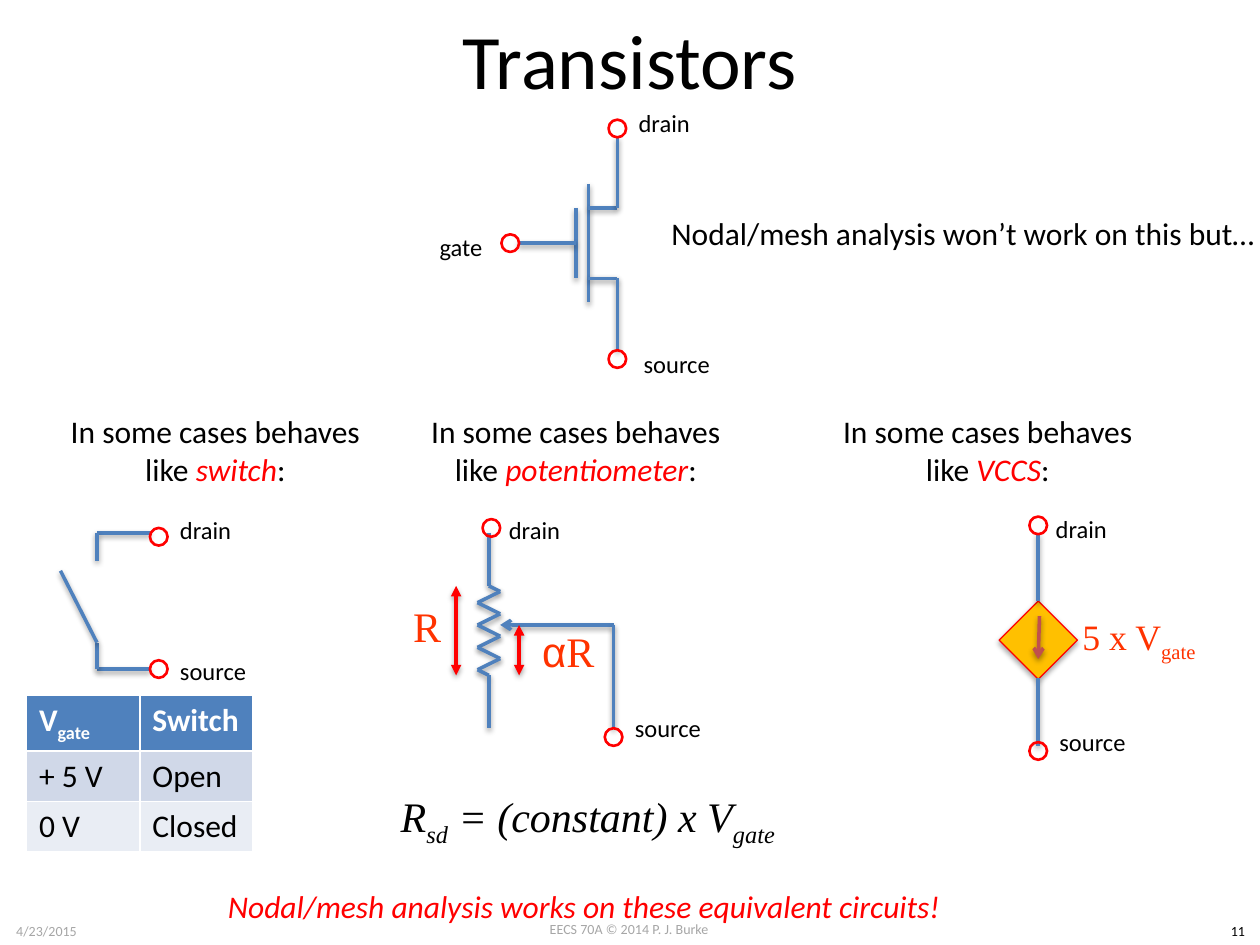
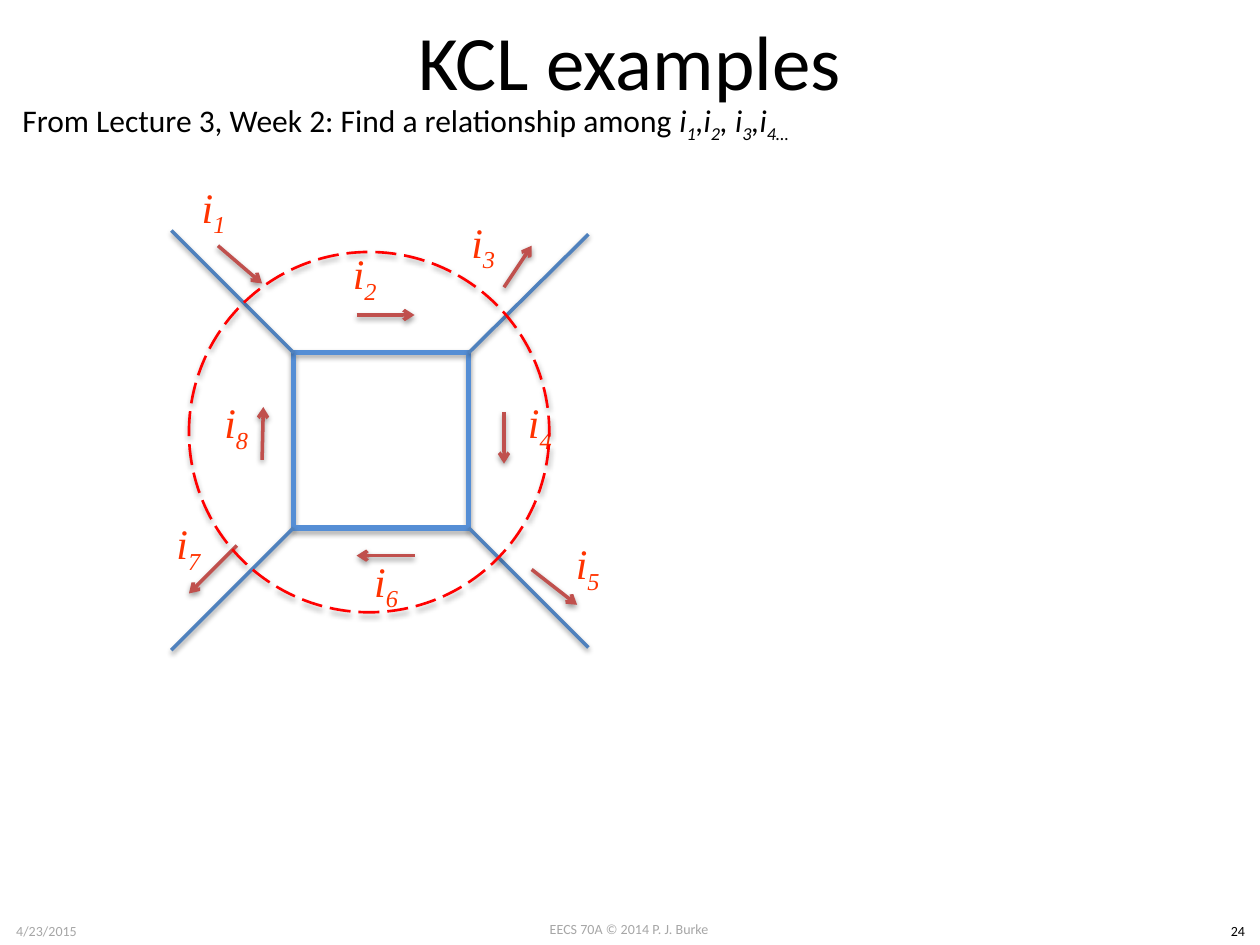
from dataclasses import dataclass
from itertools import pairwise

from lxml import etree
from pptx import Presentation
from pptx.dml.color import RGBColor
from pptx.enum import dml, shapes, text
from pptx.oxml.ns import qn
from pptx.util import Inches, Pt


@dataclass(frozen=True)
class Theme:
    body: str = "Calibri"
    math: str = "Times New Roman"
    greek: str = "Arial"
    black: str = "000000"
    white: str = "FFFFFF"
    gray: str = "A6A6A6"
    red: str = "FF0000"
    orange: str = "FF3300"
    wire: str = "4F81BD"
    current: str = "C0504D"
    loop: str = "558ED5"
    amber: str = "FFC000"
    bands: tuple = ("4F81BD", "D0D8E8", "E9EDF4")
    title_size: float = 44
    math_size: float = 24
    vccs_size: float = 20.4
    body_size: float = 18
    label_size: float = 14
    footer_size: float = 8


T = Theme()
ALIGN, ANCHOR = text.PP_ALIGN, text.MSO_ANCHOR

# Content shared by both slides; a run is (words, style)
DATE, CREDIT = "4/23/2015", "EECS 70A © 2014 P. J. Burke"

# Transistor slide
# Equivalent circuits: name, left edge of its heading
EQUIVALENTS = [("switch", 0.28), ("potentiometer", 3.14), ("VCCS", 6.41)]
HEADING_TOP, HEADING_SIZE = 3.22, (2.86, 0.71)

# Terminals: centre, label, label's left and top
TERMINALS = [
    ((4.9, 1.02), "drain", (4.97, 0.81)),
    ((4.9, 2.85), "source", (5.01, 2.72)),
    ((4.05, 1.93), "gate", (3.39, 1.79)),
    ((1.26, 4.26), "drain", (1.33, 4.04)),
    ((1.26, 5.31), "source", (1.33, 5.16)),
    ((3.9, 4.19), "drain", (3.94, 4.04)),
    ((4.87, 5.85), "source", (4.94, 5.61)),
    ((8.24, 4.17), "drain", (8.28, 4.03)),
    ((8.24, 5.96), "source", (8.31, 5.72)),
]
LABEL_WIDTH = {"drain": 0.61, "source": 0.73, "gate": 0.55}
TERMINAL_SIZE = 0.14

# Wires as chains of points
TRANSISTOR_WIRES = [
    [(4.57, 1.65), (4.57, 2.21)],
    [(4.67, 1.46), (4.67, 2.4)],
    [(4.57, 1.93), (4.11, 1.93)],
    [(4.67, 1.65), (4.9, 1.65), (4.9, 1.09)],
    [(4.67, 2.21), (4.9, 2.21), (4.9, 2.78)],
]
SWITCH_WIRES = [
    [(1.19, 4.23), (0.77, 4.23), (0.77, 4.45)],
    [(1.19, 5.31), (0.77, 5.31), (0.77, 5.1), (0.48, 4.53)],
]
RESISTOR_X, ZIGZAG_HALF, ZIGZAG_PEAKS = 3.88, 0.09, 8
ZIGZAG_TOP, ZIGZAG_BOTTOM = 4.65, 5.36
VCCS_WIRES = [[(8.24, 4.23), (8.24, 4.77)], [(8.24, 5.38), (8.24, 5.92)]]

SWITCH_STATES = [
    ([("V", ""), ("gate", "sub")], [("Switch", "")]),
    ([("+ 5 V", "")], [("Open", "")]),
    ([("0 V", "")], [("Closed", "")]),
]

# Formulas: box, runs, format
FORMULAS = [
    ((2.67, 4.6, 1.44, 0.73), [("R", "")], {}),
    ((3.79, 4.8, 1.44, 0.73), [("α", "greek"), ("R", "")], {}),
    ((8.47, 4.78, 1.14, 0.58), [("5 x V", ""), ("gate", "sub")],
     {"size": T.vccs_size}),
    ((2.92, 6.14, 3.49, 0.73),
     [("R", ""), ("sd", "sub"), (" = (constant) x V", ""), ("gate", "sub")],
     {"color": T.black, "italic": True}),
]

# KCL slide
KCL_QUESTION = [
    ("From Lecture 3, Week 2: Find a relationship among ", ""),
    ("i", "em"), ("1", "em sub"), (",i", "em"), ("2", "em sub"),
    (", i", "em"), ("3", "em sub"), (",i", "em"), ("4…", "em sub"),
]
# Currents 1 to 8: label's left and top, arrow start, arrow end
CURRENTS = [
    ((1.31, 1.36), (1.73, 1.95), (2.08, 2.25)),
    ((2.51, 1.89), (2.83, 2.5), (3.29, 2.5)),
    ((3.45, 1.64), (4, 2.28), (4.22, 1.95)),
    ((3.9, 3.07), (4, 3.27), (4, 3.68)),
    ((4.28, 4.19), (4.22, 4.52), (4.58, 4.8)),
    ((2.68, 4.33), (3.29, 4.41), (2.83, 4.41)),
    ((1.11, 4.03), (1.88, 4.33), (1.5, 4.71)),
    ((1.49, 3.07), (2.08, 3.65), (2.09, 3.23)),
]
LOOP_BOX = (2.33, 2.8, 1.39, 1.39)
SUPERNODE_BOX = (1.5, 2, 2.86, 2.86)
BRANCHES = [
    [(2.33, 2.8), (1.36, 1.83)], [(3.72, 2.8), (4.67, 1.86)],
    [(2.33, 4.19), (1.36, 5.16)], [(3.72, 4.19), (4.67, 5.14)],
]


# Drawing helpers
def inches(values):
    return [Inches(value) for value in values]


def rgb(color):
    return RGBColor.from_string(color)


def write(frame, runs, *, size=T.body_size, color=T.black, font=T.body,
          italic=False, bold=False, align=ALIGN.LEFT, anchor=ANCHOR.TOP,
          wrap=True):
    """Fill a text frame; run styles are em, accent, sub and greek."""
    if isinstance(runs, str):
        runs = [(runs, "")]
    frame.word_wrap = wrap
    frame.vertical_anchor = anchor
    paragraph = frame.paragraphs[0]
    paragraph.alignment = align
    for words, style in runs:
        run = paragraph.add_run()
        run.text = words
        run.font.size = Pt(size)
        run.font.name = T.greek if "greek" in style else font
        run.font.bold = bold
        run.font.italic = italic or "em" in style or "accent" in style
        run.font.color.rgb = rgb(T.red if "accent" in style else color)
        if "sub" in style:
            run.font._element.set("baseline", "-25000")


def add_text(slide, box, runs, **fmt):
    write(slide.shapes.add_textbox(*inches(box)).text_frame, runs, **fmt)


def add_formula(slide, box, runs, **fmt):
    base = dict(size=T.math_size, color=T.orange, font=T.math,
                align=ALIGN.CENTER, anchor=ANCHOR.MIDDLE)
    add_text(slide, box, runs, **(base | fmt))


def cast_shadow(part, opacity, distance):
    properties = part._element.spPr
    effects = properties.find(qn("a:effectLst"))
    if effects is None:
        effects = etree.SubElement(properties, qn("a:effectLst"))
    shadow = etree.SubElement(
        effects, qn("a:outerShdw"), blurRad="40000", dist=str(Pt(distance)),
        dir="5400000", rotWithShape="0")
    tone = etree.SubElement(shadow, qn("a:srgbClr"), val=T.black)
    etree.SubElement(tone, qn("a:alpha"), val=str(opacity * 1000))


def add_wire(slide, points, color=T.wire, head=None, tail=None):
    for start, end in pairwise(points):
        wire = slide.shapes.add_connector(
            shapes.MSO_CONNECTOR.STRAIGHT, *inches(start + end))
        wire.line.width = Pt(2)
        wire.line.color.rgb = rgb(color)
        for tag, kind in (("a:headEnd", head), ("a:tailEnd", tail)):
            if kind:
                etree.SubElement(wire.line._ln, qn(tag), type=kind)
        cast_shadow(wire, 38, 1.6)


def add_outline(slide, preset, box, color, width, fill=None, shadow=True):
    outline = slide.shapes.add_shape(preset, *inches(box))
    outline.shadow.inherit = False
    if fill:
        outline.fill.solid()
        outline.fill.fore_color.rgb = rgb(fill)
    else:
        outline.fill.background()
    outline.line.color.rgb = rgb(color)
    outline.line.width = Pt(width)
    if shadow:
        cast_shadow(outline, 35, 1.8)
    return outline


def add_slide(deck, title, number, title_top, title_height):
    slide = deck.slides.add_slide(deck.slide_layouts[5])
    heading = slide.shapes.title
    heading.left, heading.top, heading.width, heading.height = inches(
        (0.5, title_top, 9, title_height))
    write(heading.text_frame, title, size=T.title_size, align=ALIGN.CENTER,
          anchor=ANCHOR.MIDDLE)
    for box, words, color in (
            ((3.83, 7.26, 2.33, 0.24), CREDIT, T.gray),
            ((0, 7.27, 0.74, 0.24), DATE, T.gray),
            ((9.65, 7.27, 0.35, 0.24), number, T.black)):
        add_text(slide, box, words, size=T.footer_size, color=color,
                 align=ALIGN.CENTER, wrap=box[2] > 1)
    return slide


# Slide parts
def add_terminals(slide):
    for (x, y), name, corner in TERMINALS:
        half = TERMINAL_SIZE / 2
        add_outline(slide, shapes.MSO_SHAPE.OVAL,
                    (x - half, y - half, TERMINAL_SIZE, TERMINAL_SIZE),
                    T.red, 1.5, shadow=False)
        add_text(slide, (*corner, LABEL_WIDTH[name], 0.34), name,
                 size=T.label_size, wrap=False)


def add_potentiometer(slide):
    step = (ZIGZAG_BOTTOM - ZIGZAG_TOP) / ZIGZAG_PEAKS
    peaks = [(RESISTOR_X + ZIGZAG_HALF * (-1) ** i,
              ZIGZAG_TOP + step * (i + 0.5)) for i in range(ZIGZAG_PEAKS)]
    add_wire(slide, [(RESISTOR_X, 4.23), (RESISTOR_X, ZIGZAG_TOP), *peaks,
                     (RESISTOR_X, ZIGZAG_BOTTOM), (RESISTOR_X, 5.78)])
    add_wire(slide, [(4.87, 4.96), (3.97, 4.96)], tail="arrow")
    add_wire(slide, [(4.87, 4.96), (4.87, 5.78)])
    for x, top in ((3.62, ZIGZAG_TOP), (4.12, 4.96)):
        add_wire(slide, [(x, top), (x, ZIGZAG_BOTTOM)], T.red,
                 head="triangle", tail="triangle")


def add_switch_table(slide):
    table = slide.shapes.add_table(
        len(SWITCH_STATES), 2, *inches((0.21, 5.52, 1.8, 1.2))).table
    for r, (states, band) in enumerate(zip(SWITCH_STATES, T.bands)):
        for c, runs in enumerate(states):
            cell = table.cell(r, c)
            cell.fill.solid()
            cell.fill.fore_color.rgb = rgb(band)
            write(cell.text_frame, runs, bold=r == 0,
                  color=T.white if r == 0 else T.black)


def build_transistors(deck):
    slide = add_slide(deck, "Transistors", "11", -0.02, 0.97)
    for name, left in EQUIVALENTS:
        add_text(slide, (left, HEADING_TOP, *HEADING_SIZE),
                 [("In some cases behaves like ", ""), (name, "accent"),
                  (":", "")], align=ALIGN.CENTER)
    for points in TRANSISTOR_WIRES + SWITCH_WIRES:
        add_wire(slide, points)
    add_potentiometer(slide)
    source = add_outline(slide, shapes.MSO_SHAPE.RECTANGLE,
                         (8.02, 4.86, 0.44, 0.44), T.red, 0.75, T.amber)
    source.rotation = 225
    for points in VCCS_WIRES:
        add_wire(slide, points)
    add_wire(slide, [(8.25, 4.89), (8.24, 5.23)], T.current, tail="arrow")
    add_terminals(slide)
    add_switch_table(slide)
    for box, runs, fmt in FORMULAS:
        add_formula(slide, box, runs, **fmt)
    add_text(slide, (5.23, 1.65, 4.88, 0.4),
             "Nodal/mesh analysis won’t work on this but…", wrap=False)
    add_text(slide, (1.71, 6.99, 5.92, 0.4),
             "Nodal/mesh analysis works on these equivalent circuits!",
             color=T.red, italic=True, wrap=False)


def build_kcl(deck):
    slide = add_slide(deck, "KCL examples", "24", 0, 0.95)
    add_text(slide, (0.08, 0.75, 6.42, 0.4), KCL_QUESTION, wrap=False)
    add_outline(slide, shapes.MSO_SHAPE.RECTANGLE, LOOP_BOX, T.loop, 3)
    for points in BRANCHES:
        add_wire(slide, points)
    for number, (corner, start, end) in enumerate(CURRENTS, 1):
        add_wire(slide, [start, end], T.current, tail="arrow")
        add_formula(slide, (*corner, 0.77, 0.61),
                    [("i", ""), (str(number), "sub")], italic=True)
    supernode = add_outline(slide, shapes.MSO_SHAPE.OVAL, SUPERNODE_BOX,
                            T.red, 1.5)
    supernode.line.dash_style = dml.MSO_LINE.LONG_DASH


def main():
    deck = Presentation()
    deck.slide_width, deck.slide_height = Inches(10), Inches(7.5)
    build_transistors(deck)
    build_kcl(deck)
    deck.save("out.pptx")


if __name__ == "__main__":
    main()
